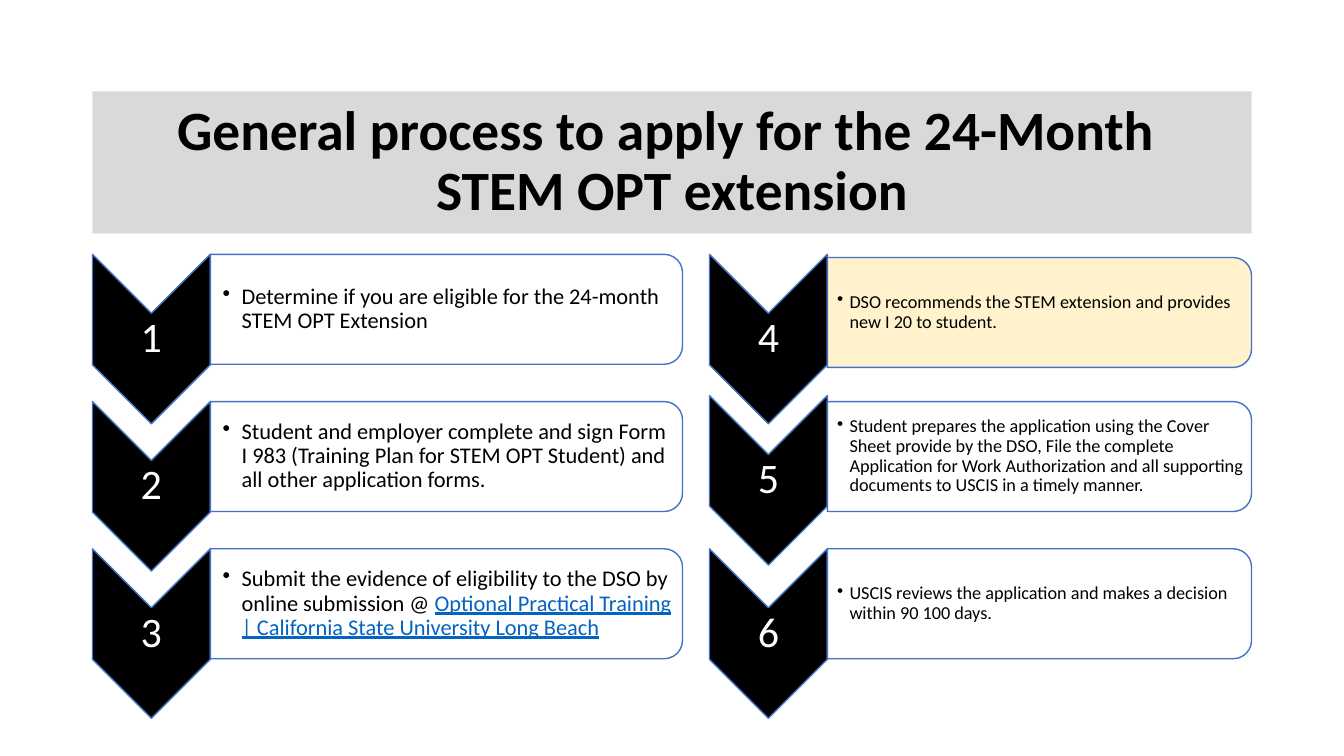
from lxml import etree
from pptx import Presentation
from pptx.dml.color import RGBColor
from pptx.enum.shapes import MSO_SHAPE
from pptx.enum.text import MSO_ANCHOR, MSO_AUTO_SIZE, PP_ALIGN
from pptx.oxml.ns import qn
from pptx.util import Cm, Pt

CHEVRON = MSO_SHAPE.CHEVRON
PANEL = MSO_SHAPE.ROUND_2_SAME_RECTANGLE
MIDDLE = MSO_ANCHOR.MIDDLE
FIXED = MSO_AUTO_SIZE.NONE
LEFT, CENTER = PP_ALIGN.LEFT, PP_ALIGN.CENTER

COLORS = {
    "band": "D9D9D9",
    "black": "000000",
    "white": "FFFFFF",
    "cream": "FFF2CC",
    "edge": "4472C4",
    "link": "0563C1",
}
FONT = "Calibri"
TITLE = "General process to apply for the 24-Month \vSTEM OPT extension"

# Each step: text, linked text, panel fill, chevron shift, panel shift (cm)
FIRST = [
    ("Determine if you are eligible for the 24-month STEM OPT Extension",
     "", "white", 0, 0),
    ("Student and employer complete and sign Form I 983 (Training Plan for "
     "STEM OPT Student) and all other application forms.", "", "white", 0, 0),
    ("Submit the evidence of eligibility to the DSO by online submission @ ",
     "Optional Practical Training | California State University Long Beach",
     "white", 0, 0),
]
LAST = [
    ("DSO recommends the STEM extension and provides new I 20 to student.",
     "", "cream", 0, 0.08),
    ("Student prepares the application using the Cover Sheet provide by the "
     "DSO, File the complete Application for Work Authorization and all "
     "supporting documents to USCIS in a timely manner.",
     "", "white", -0.15, 0),
    ("USCIS reviews the application and makes a decision within 90 100 days.",
     "", "white", 0, 0),
]

TOP, STEP = 6.41, 3.71
ARROW_W, ARROW_H = 2.97, 4.27
PANEL_H = 2.77


def rgb(name):
    return RGBColor.from_string(COLORS[name])


def write(shape, text, size, color="black", bold=False, align=LEFT,
          inset=None, bullet=0, link=""):
    """Fill a shape with one paragraph; bullet is its hanging indent in cm."""
    frame = shape.text_frame
    frame.word_wrap = True
    frame.auto_size = FIXED
    frame.vertical_anchor = MIDDLE
    if inset:
        (frame.margin_left, frame.margin_top,
         frame.margin_right, frame.margin_bottom) = map(Cm, inset)
    frame.text = text
    para = frame.paragraphs[0]
    para.alignment = align
    para.line_spacing = 0.9
    if bullet:
        para.level = 1
        props = para._p.get_or_add_pPr()
        props.set("marL", str(Cm(bullet)))
        props.set("indent", str(-Cm(bullet)))
        etree.SubElement(props, qn("a:buChar")).set("char", "•")
    if link:
        para.add_run().text = link
    for run in para.runs:
        font = run.font
        font.name, font.size, font.bold = FONT, Pt(size), bold
        font.color.rgb = rgb(color)
    if link:
        font.underline = True
        font.color.rgb = rgb("link")


def turned(shapes, kind, x, y, w, h, fill):
    """Add a shape turned by 90 degrees so that it covers the given box."""
    shape = shapes.add_shape(kind, Cm(x + (w - h) / 2), Cm(y + (h - w) / 2),
                             Cm(h), Cm(w))
    shape.rotation = 90
    shape.shadow.inherit = False
    shape.fill.solid()
    shape.fill.fore_color.rgb = rgb(fill)
    shape.line.color.rgb = rgb("edge")
    shape.line.width = Pt(1)
    if fill == "white":
        tint = shape._element.spPr.find(qn("a:solidFill"))[0]
        etree.SubElement(tint, qn("a:alpha")).set("val", "90000")


def label(shapes, x, y, w, h, text, **style):
    box = shapes.add_textbox(Cm(x), Cm(y), Cm(w), Cm(h))
    write(box, text, **style)


def column(slide, x, width, steps, start, **style):
    """Stack numbered steps, each a down chevron with a panel beside it."""
    shapes = slide.shapes.add_group_shape().shapes
    side = x + ARROW_W
    wide = width - ARROW_W
    for row, (text, link, fill, lift, drop) in enumerate(steps):
        y = TOP + row * STEP
        turned(shapes, CHEVRON, x, y + lift, ARROW_W, ARROW_H, "black")
        label(shapes, x, y + lift + ARROW_W / 2, ARROW_W, ARROW_H - ARROW_W,
              str(start + row), size=30, color="white", align=CENTER,
              inset=[0.05] * 4)
        turned(shapes, PANEL, side, y + drop, wide, PANEL_H, fill)
        label(shapes, side, y + drop + 0.14, wide - 0.13, PANEL_H - 0.28,
              text, link=link, **style)


def heading(slide, x, y, w, h):
    title = slide.shapes.title
    title.left, title.top, title.width, title.height = map(Cm, (x, y, w, h))
    title.fill.solid()
    title.fill.fore_color.rgb = rgb("band")
    write(title, TITLE, size=39.6, bold=True, align=CENTER)


def main():
    deck = Presentation()
    deck.slide_width, deck.slide_height = Cm(33.87), Cm(19.05)
    slide = deck.slides.add_slide(deck.slide_layouts[5])
    heading(slide, 2.33, 2.3, 29.21, 3.58)
    column(slide, 2.33, 14.87, FIRST, 1, size=16, bullet=0.48,
           inset=(0.31, 0.03, 0.03, 0.03))
    column(slide, 17.88, 13.66, LAST, 4, size=13, bullet=0.31,
           inset=(0.25, 0.03, 0.03, 0.03))
    deck.save("out.pptx")


if __name__ == "__main__":
    main()
